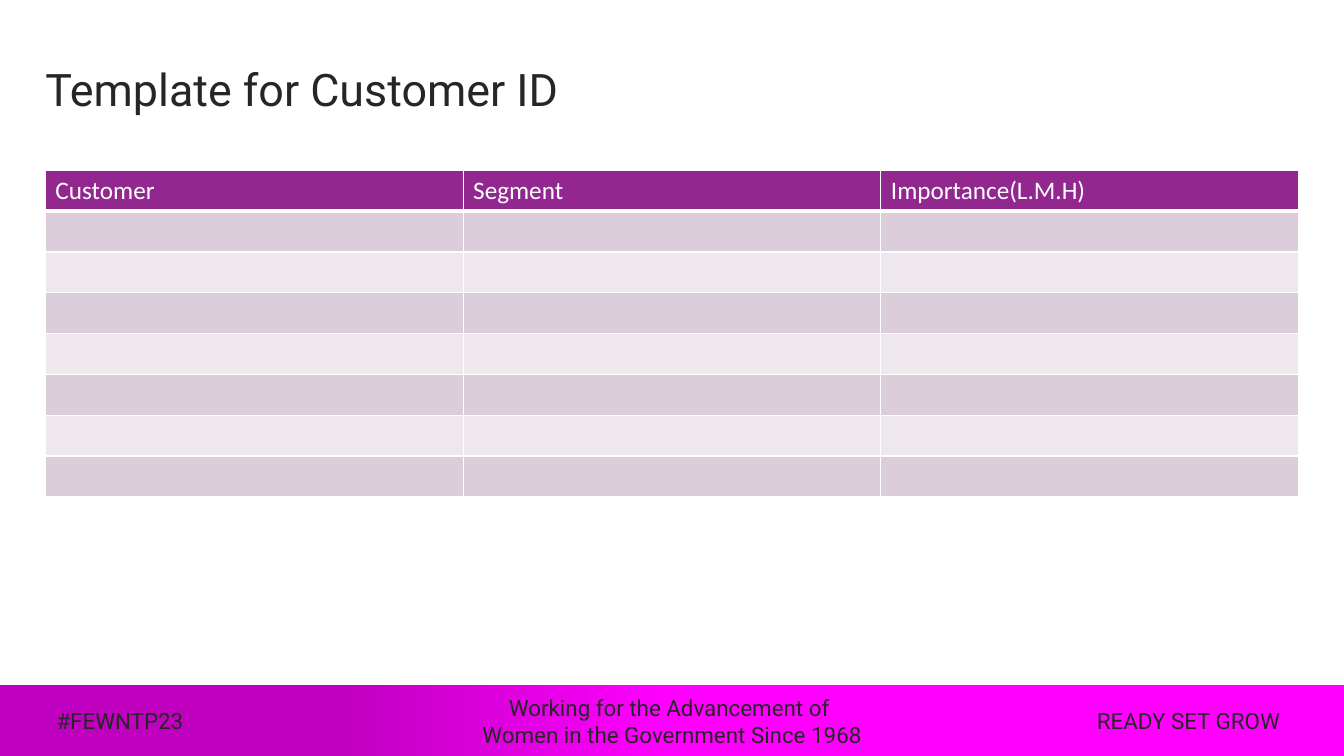
from dataclasses import dataclass
from lxml.etree import SubElement as Sub
from pptx import Presentation
from pptx.dml.color import RGBColor as Rgb
from pptx.enum.shapes import MSO_SHAPE as Shape
from pptx.enum.text import MSO_ANCHOR as Anchor, MSO_AUTO_SIZE as Fit, PP_ALIGN as Align
from pptx.oxml.ns import qn
from pptx.util import Emu, Pt


@dataclass(frozen=True)
class Theme:
    ink: str = "262626"
    white: str = "FFFFFF"
    head: str = "92278F"
    bands: tuple = ("DCCDDB", "EEE8EE")
    glow: tuple = ((0, "BF00BF"), (25, "BF00BF"), (50, "FF00FF"), (100, "FF00FF"))
    font: str = "Roboto"
    cell: str = "Calibri"
    big: int = 32
    mid: int = 18
    small: int = 16


def px(num):
    return Emu(num * 9144)


class Deck:
    """Draws themed elements on one title-only slide."""

    def __init__(self, theme, wide, high):
        self.theme = theme
        self.prs = Presentation()
        self.prs.slide_width, self.prs.slide_height = px(wide), px(high)
        self.slide = self.prs.slides.add_slide(self.prs.slide_layouts[5])
        self.shapes = self.slide.shapes

    def style(self, frame, font, size, color, align=Align.LEFT):
        for para in frame.paragraphs:
            para.alignment = align
            for run in para.runs:
                run.font.name, run.font.size = font, Pt(size)
                run.font.color.rgb = Rgb.from_string(color)

    def inset(self, frame, gap):
        frame.margin_left = frame.margin_right = px(gap)
        frame.margin_top = frame.margin_bottom = px(gap)

    def title(self, text, *box):
        shape = self.shapes.title
        shape.left, shape.top, shape.width, shape.height = map(px, box)
        frame = shape.text_frame
        frame.text = text
        frame.auto_size = Fit.NONE
        frame.vertical_anchor = Anchor.BOTTOM
        frame.paragraphs[0].line_spacing = 0.9
        self.inset(frame, 0)
        self.style(frame, self.theme.font, self.theme.big, self.theme.ink)

    def band(self, *box):
        bar = self.shapes.add_shape(Shape.RECTANGLE, *map(px, box))
        bar.shadow.inherit = False
        bar.line.fill.background()
        bar.fill.gradient()
        bar.fill.gradient_angle = 0
        stops = next(bar.element.iter(qn("a:gsLst")))
        for old in list(stops):
            stops.remove(old)
        for pos, color in self.theme.glow:
            stop = Sub(stops, qn("a:gs"), pos=str(pos * 1000))
            Sub(stop, qn("a:srgbClr"), val=color)

    def label(self, text, align, *box):
        frame = self.shapes.add_textbox(*map(px, box)).text_frame
        frame.text = text
        frame.word_wrap = False
        frame.vertical_anchor = Anchor.MIDDLE
        self.inset(frame, 20)
        self.style(frame, self.theme.font, self.theme.small, self.theme.ink, align)

    def edge(self, cell, side, width):
        line = Sub(cell._tc.get_or_add_tcPr(), qn(f"a:ln{side}"), w=str(Pt(width)))
        fill = Sub(line, qn("a:solidFill"))
        Sub(fill, qn("a:srgbClr"), val=self.theme.white)

    def table(self, heads, rows, left, top, wide, high):
        size = map(px, (left, top, wide, high))
        grid = self.shapes.add_table(rows, len(heads), *size).table
        for row, line in enumerate(grid.rows):
            for col, cell in enumerate(line.cells):
                for side in "LRTB":
                    self.edge(cell, side, 3 if row == 0 and side == "B" else 1)
                color = self.theme.bands[(row - 1) % 2] if row else self.theme.head
                cell.fill.solid()
                cell.fill.fore_color.rgb = Rgb.from_string(color)
                if row == 0:
                    cell.text_frame.text = heads[col]
                    self.style(cell.text_frame, self.theme.cell, self.theme.mid, self.theme.white)


def main():
    deck = Deck(Theme(), 1333, 750)
    deck.band(0, 680, 1333, 70)
    deck.label("#FEWNTP23", Align.CENTER, 36, 694, 166, 42)
    deck.label("Working for the Advancement of \nWomen in the Government Since 1968",
               Align.CENTER, 439, 694, 455, 42)
    deck.label("READY SET GROW", Align.LEFT, 1068, 694, 229, 42)
    deck.title("Template for Customer ID", 45, 31, 1243, 84)
    deck.table(("Customer", "Segment", "Importance(L.M.H)"), 8, 45, 169, 1243, 324)
    deck.prs.save("out.pptx")


if __name__ == "__main__":
    main()
